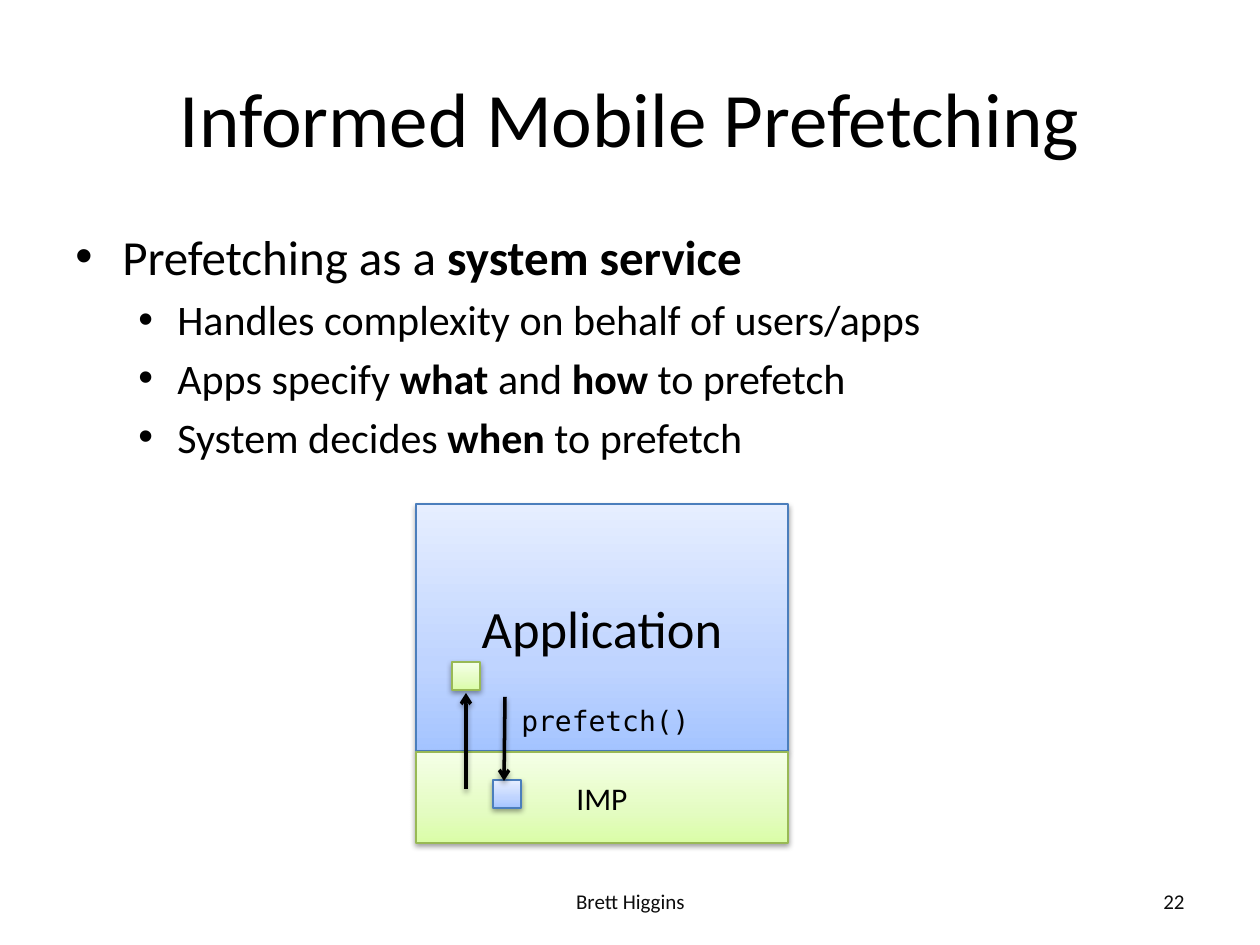
from dataclasses import dataclass

from lxml.etree import SubElement
from pptx import Presentation
from pptx.dml.color import RGBColor
from pptx.enum.shapes import MSO_CONNECTOR, MSO_SHAPE
from pptx.enum.text import MSO_ANCHOR, PP_ALIGN
from pptx.oxml.ns import qn
from pptx.util import Emu, Pt

EMU_PER_PX = 914400 / 126


@dataclass(frozen=True)
class Theme:
    font: str = "Calibri"
    code_font: str = "DejaVu Sans Mono"
    ink: str = "000000"
    footer_ink: str = "0D0D0D"
    # Gradient colours run from bottom to top, then the outline
    blue: tuple = ("A4C4FF", "BFD4FF", "E6EEFF", "4B7EBC")
    green: tuple = ("DAFDA7", "E4FCC2", "F5FFE7", "98B955")
    title: int = 44
    bullet: int = 28
    sub_bullet: int = 24
    application: int = 30
    service: int = 18
    code: int = 16
    footer: int = 12


THEME = Theme()

# Each bullet: level, then (text, bold) pieces
BULLETS = [
    (0, [("Prefetching as a ", False), ("system service", True)]),
    (1, [("Handles complexity on behalf of users/apps", False)]),
    (1, [("Apps specify ", False), ("what", True), (" and ", False),
         ("how ", True), ("to prefetch", False)]),
    (1, [("System decides ", False), ("when ", True), ("to prefetch", False)]),
]


def px(length):
    return Emu(round(length * EMU_PER_PX))


def style_font(font, size, color=THEME.ink, name=THEME.font):
    font.size, font.name = Pt(size), name
    font.color.rgb = RGBColor.from_string(color)


def write(frame, text, size, align=PP_ALIGN.CENTER, color=THEME.ink, name=THEME.font):
    frame.text = text
    frame.vertical_anchor = MSO_ANCHOR.MIDDLE
    paragraph = frame.paragraphs[0]
    paragraph.alignment = align
    style_font(paragraph.runs[0].font, size, color, name)


def add_text(slide, box, text, size, wrap=True, **style):
    frame = slide.shapes.add_textbox(*map(px, box)).text_frame
    frame.word_wrap = wrap
    write(frame, text, size, **style)


def add_bullets(slide, box):
    frame = slide.shapes.add_textbox(*map(px, box)).text_frame
    frame.word_wrap = True
    for index, (level, pieces) in enumerate(BULLETS):
        paragraph = frame.add_paragraph() if index else frame.paragraphs[0]
        size = THEME.sub_bullet if level else THEME.bullet
        margin, hang = (102, 39) if level else (47, 47)
        paragraph.level = level
        if index:
            paragraph.space_before = Pt(size * 0.2)
        properties = paragraph._p.get_or_add_pPr()
        properties.set("marL", str(px(margin)))
        properties.set("indent", str(px(-hang)))
        SubElement(properties, qn("a:buFont"), typeface="Arial")
        SubElement(properties, qn("a:buChar"), char="•")
        for text, bold in pieces:
            run = paragraph.add_run()
            run.text = text
            style_font(run.font, size)
            run.font.bold = bold


def add_soft_shadow(effects):
    shadow = SubElement(effects, qn("a:outerShdw"), blurRad="40000", dist="20000",
                        dir="5400000", rotWithShape="0")
    color = SubElement(shadow, qn("a:srgbClr"), val=THEME.ink)
    SubElement(color, qn("a:alpha"), val="38000")


def add_block(slide, box, palette, text="", size=THEME.service):
    block = slide.shapes.add_shape(MSO_SHAPE.RECTANGLE, *map(px, box))
    *stops, outline = palette
    block.fill.gradient()
    block.fill.gradient_angle = 90
    stop_list = block._element.spPr.find(".//" + qn("a:gsLst"))
    stop_list.clear()
    for position, color in zip((0, 35, 100), stops):
        stop = SubElement(stop_list, qn("a:gs"), pos=str(position * 1000))
        SubElement(stop, qn("a:srgbClr"), val=color)
    block.line.color.rgb = RGBColor.from_string(outline)
    block.line.width = Pt(0.75)
    block.shadow.inherit = False
    add_soft_shadow(block._element.spPr.find(qn("a:effectLst")))
    if text:
        write(block.text_frame, text, size)


def add_arrow(slide, *ends):
    arrow = slide.shapes.add_connector(MSO_CONNECTOR.STRAIGHT, *map(px, ends))
    arrow.line.color.rgb = RGBColor.from_string(THEME.ink)
    arrow.line.width = Pt(2)
    properties = arrow._element.spPr
    SubElement(properties.find(qn("a:ln")), qn("a:tailEnd"), type="arrow")
    add_soft_shadow(SubElement(properties, qn("a:effectLst")))


def main():
    deck = Presentation()
    deck.slide_width, deck.slide_height = px(1260), px(945)
    slide = deck.slides.add_slide(deck.slide_layouts[6])

    # Title, bullets and footer
    add_text(slide, (63, 38, 1134, 157), "Informed Mobile Prefetching", THEME.title)
    add_bullets(slide, (63, 220, 1134, 624))
    add_text(slide, (431, 876, 399, 50), "Brett Higgins", THEME.footer,
             color=THEME.footer_ink)
    add_text(slide, (903, 876, 294, 50), "22", THEME.footer,
             align=PP_ALIGN.RIGHT, color=THEME.footer_ink)

    # Application stacked on the prefetching service
    add_block(slide, (416, 504, 372, 247), THEME.blue, "Application", THEME.application)
    add_block(slide, (416, 752, 372, 91), THEME.green, "IMP")

    # Request going down, data coming up
    add_block(slide, (493, 780, 28, 28), THEME.blue)
    add_arrow(slide, 505, 697, 504, 781)
    add_arrow(slide, 466, 789, 466, 693)
    add_text(slide, (509, 697, 195, 47), "prefetch()", THEME.code, wrap=False,
             align=PP_ALIGN.LEFT, name=THEME.code_font)
    add_block(slide, (452, 662, 28, 28), THEME.green)

    deck.save("out.pptx")


if __name__ == "__main__":
    main()
